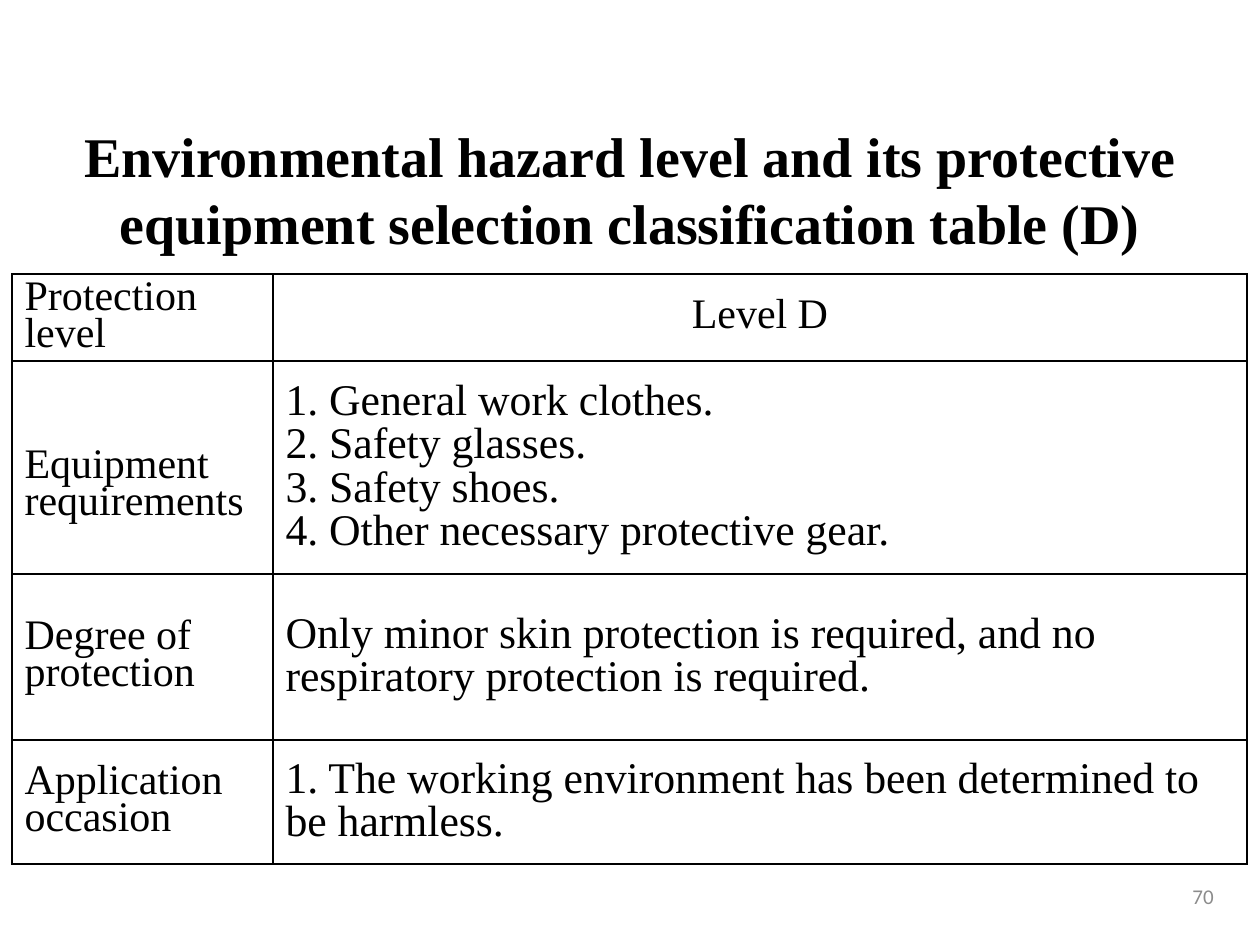
import pptx
import pptx.dml.color
import pptx.enum.text
import pptx.oxml
import pptx.oxml.ns
import pptx.util

BLACK = pptx.dml.color.RGBColor(0x00, 0x00, 0x00)
GRAY = pptx.dml.color.RGBColor(0x8C, 0x8C, 0x8C)
SERIF = "Times New Roman"
SCALE = 914400 // 126
ALIGN = pptx.enum.text.PP_ALIGN
ANCHOR = pptx.enum.text.MSO_ANCHOR

COLUMNS = [261, 974]
ROWS = [87, 213, 166, 124]
LABELS = ["Protection level", "Equipment requirements", "Degree of protection", "Application occasion"]
DETAILS = [
    ["Level D"],
    [" General work clothes.", " Safety glasses.", " Safety shoes.", " Other necessary protective gear."],
    ["Only minor skin protection is required, and no respiratory protection is required."],
    [" The working environment has been determined to be harmless."],
]
NUMBERED_ROWS = {1, 3}


def px(length):
    """Turn whole pixels into EMU."""
    return pptx.util.Emu(length * SCALE)


def style(para, size, font, color, align, bold=False):
    """Format a paragraph and its runs."""
    para.alignment = align
    for span in para.runs:
        span.font.size = pptx.util.Pt(size)
        span.font.name = font
        span.font.bold = bold
        span.font.color.rgb = color


def number(para):
    """Give a paragraph an automatic number."""
    props = para._p.get_or_add_pPr()
    props.set("marL", "0")
    props.set("indent", "0")
    bullet = pptx.oxml.parse_xml(
        f'<a:buAutoNum {pptx.oxml.ns.nsdecls("a")} type="arabicPeriod"/>')
    props.append(bullet)


def outline(cell):
    """Draw a thin black border around a cell."""
    props = cell._tc.get_or_add_tcPr()
    for index, side in enumerate(("lnL", "lnR", "lnT", "lnB")):
        line = pptx.oxml.parse_xml(
            f'<a:{side} {pptx.oxml.ns.nsdecls("a")} w="12700"><a:solidFill>'
            f'<a:srgbClr val="{BLACK}"/></a:solidFill></a:{side}>')
        props.insert(index, line)


def fill_cell(cell, lines, size, spacing, align=ALIGN.LEFT, numbered=False):
    """Write lines of text into a bordered cell."""
    cell.fill.background()
    outline(cell)
    cell.vertical_anchor = ANCHOR.MIDDLE
    cell.text_frame.text = "\n".join(lines)
    for para in cell.text_frame.paragraphs:
        para.line_spacing = spacing
        if numbered:
            number(para)
        style(para, size, SERIF, BLACK, align)


def add_title(page):
    """Place the title above the table."""
    title = page.shapes.title
    title.left, title.top, title.width, title.height = px(35), px(102), px(1191), px(160)
    frame = title.text_frame
    frame.text = "Environmental hazard level and its protective equipment selection classification table (D)"
    frame.word_wrap = True
    frame.auto_size = pptx.enum.text.MSO_AUTO_SIZE.NONE
    frame.vertical_anchor = ANCHOR.BOTTOM
    style(frame.paragraphs[0], 32, SERIF, BLACK, ALIGN.CENTER, bold=True)


def add_protection_table(page):
    """Build the table of protection requirements."""
    table = page.shapes.add_table(
        len(ROWS), len(COLUMNS), px(12), px(274), px(sum(COLUMNS)), px(sum(ROWS))).table
    table.first_row = False
    table.horz_banding = False
    for column, width in zip(table.columns, COLUMNS):
        column.width = px(width)
    for index, (height, label, lines) in enumerate(zip(ROWS, LABELS, DETAILS)):
        table.rows[index].height = px(height)
        fill_cell(table.cell(index, 0), [label], 24, 0.8)
        if index == 0:
            fill_cell(table.cell(index, 1), lines, 24, 0.8, ALIGN.CENTER)
        else:
            fill_cell(table.cell(index, 1), lines, 25, 0.9, numbered=index in NUMBERED_ROWS)
    table.cell(1, 0).margin_top = px(44)


def add_page_number(page):
    """Place the page number at the lower right."""
    box = page.shapes.add_textbox(px(932), px(871), px(294), px(50))
    frame = box.text_frame
    frame.word_wrap = True
    frame.vertical_anchor = ANCHOR.MIDDLE
    frame.text = "70"
    style(frame.paragraphs[0], 12, "Calibri", GRAY, ALIGN.RIGHT)


def main():
    """Build and save the slide."""
    deck = pptx.Presentation()
    deck.slide_width, deck.slide_height = px(1260), px(945)
    page = deck.slides.add_slide(deck.slide_layouts[5])
    add_protection_table(page)
    add_title(page)
    add_page_number(page)
    deck.save("out.pptx")


if __name__ == "__main__":
    main()
